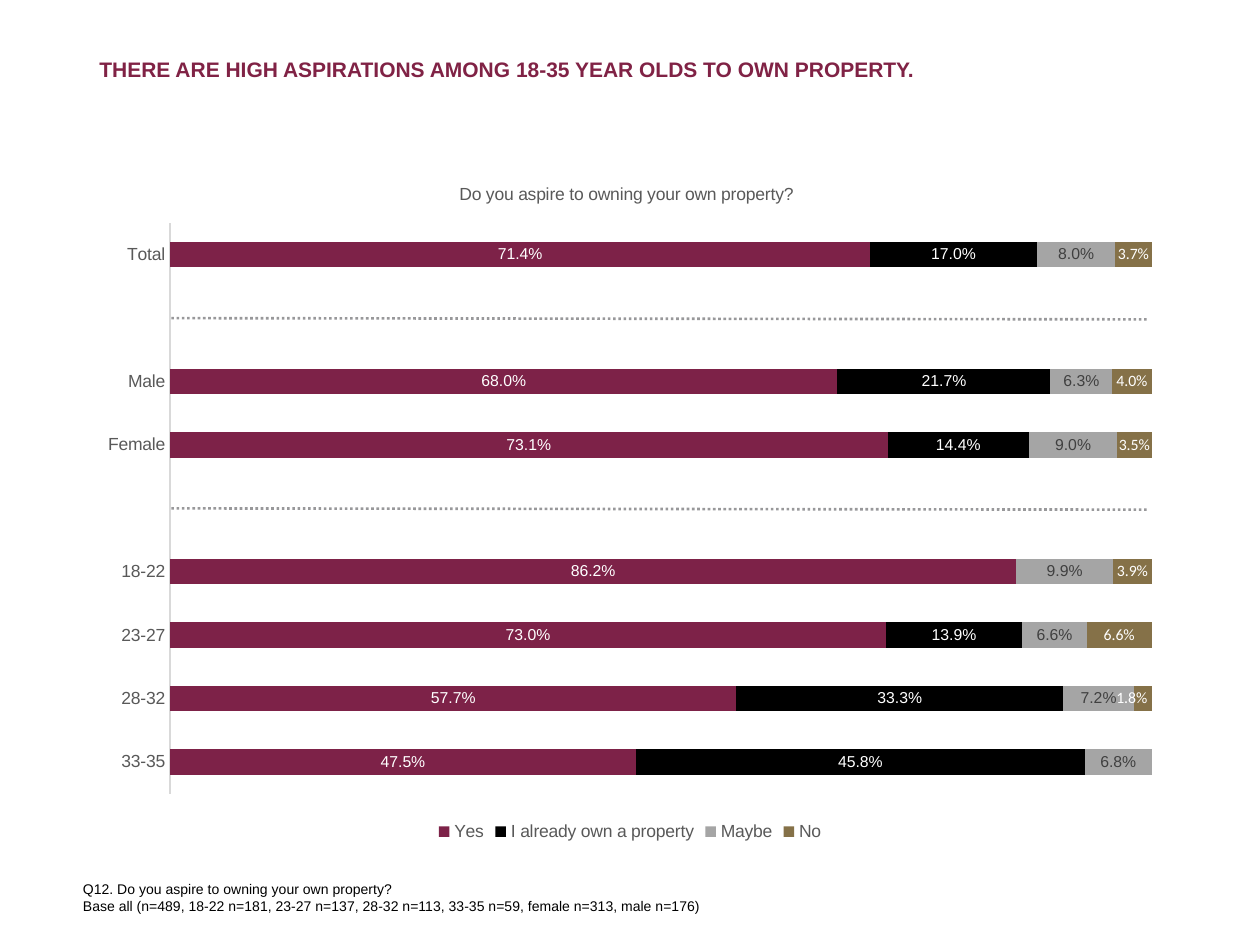
"""Build a slide on how many young adults aspire to own property."""
from typing import NamedTuple

from lxml.etree import SubElement
from pptx import Presentation
from pptx.chart.data import CategoryChartData
from pptx.dml.color import RGBColor as Rgb
from pptx.enum import chart as kinds, dml, shapes
from pptx.oxml.ns import qn
from pptx.util import Inches, Pt


class Theme(NamedTuple):
    face: str = "Arial"
    alt: str = "Calibri"
    head: str = "802245"
    wine: str = "7D2248"
    ink: str = "000000"
    grey: str = "A5A5A5"
    gold: str = "857148"
    white: str = "FFFFFF"
    dark: str = "404040"
    text: str = "595959"
    axis: str = "D9D9D9"
    rule: str = "98989A"
    big: int = 12
    mid: int = 10
    label: int = 9
    small: int = 8


class Box(NamedTuple):
    x: float
    y: float
    w: float
    h: float


class Series(NamedTuple):
    name: str
    vals: tuple
    fill: str
    ink: str
    face: str


class Note(NamedTuple):
    box: Box
    lines: tuple
    size: int
    color: str
    bold: bool
    wrap: bool


T = Theme()
FRAME = Box(0.69, 1.26, 8.62, 5.46)
PLOT = Box(1.35, 1.77, 7.79, 4.53)
CATS = ("33-35", "28-32", "23-27", "18-22", "", "Female", "Male", "", "Total")
ROW = PLOT.h / len(CATS)
BREAKS = (1.5, 4.5)
FORMAT = "0.0%;;"
ASK = "Do you aspire to owning your own property?"

BARS = (
    Series("Yes", (0.475, 0.577, 0.73, 0.862, None, 0.731, 0.68, None, 0.714),
           T.wine, T.white, T.face),
    Series("I already own a property",
           (0.458, 0.333, 0.139, 0, None, 0.144, 0.217, None, 0.17),
           T.ink, T.white, T.face),
    Series("Maybe", (0.068, 0.072, 0.066, 0.099, None, 0.09, 0.063, None, 0.08),
           T.grey, T.dark, T.face),
    Series("No", (0, 0.018, 0.066, 0.039, None, 0.035, 0.04, None, 0.037),
           T.gold, T.white, T.alt),
)

NOTES = (
    Note(Box(0.69, 0.4, 8.62, 0.64),
         ("THERE ARE HIGH ASPIRATIONS AMONG 18-35 YEAR OLDS TO OWN PROPERTY.",),
         T.big, T.head, bold=True, wrap=True),
    Note(Box(0.56, 6.94, 5.17, 0.37),
         ("Q12. " + ASK,
          "Base all (n=489, 18-22 n=181, 23-27 n=137, 28-32 n=113, 33-35 n=59, "
          "female n=313, male n=176)"),
         T.small, T.ink, bold=False, wrap=False),
)


def style(font, size: int, color: str, face: str = T.face, bold: bool = False) -> None:
    """Set the look of a font."""
    font.size, font.name, font.bold = Pt(size), face, bold
    font.color.rgb = Rgb.from_string(color)


def write(slide, note: Note) -> None:
    """Add a text box with one run a line."""
    frame = slide.shapes.add_textbox(*map(Inches, note.box)).text_frame
    frame.word_wrap = note.wrap
    for i, line in enumerate(note.lines):
        para = frame.add_paragraph() if i else frame.paragraphs[0]
        run = para.add_run()
        run.text = line
        style(run.font, note.size, note.color, bold=note.bold)


def pin(host, at: int, **vals) -> None:
    """Give a chart part a manual layout in shares of the chart."""
    for old in host.findall(qn("c:layout")):
        host.remove(old)
    lay = SubElement(host, qn("c:layout"))
    host.insert(at, lay)
    hand = SubElement(lay, qn("c:manualLayout"))
    for tag, val in vals.items():
        SubElement(hand, qn("c:" + tag)).set("val", str(val))


def paint(plot_bar, bar: Series) -> None:
    """Colour one series and its labels."""
    plot_bar.format.fill.solid()
    plot_bar.format.fill.fore_color.rgb = Rgb.from_string(bar.fill)
    tags = plot_bar.data_labels
    tags.show_value = True
    tags.position = kinds.XL_LABEL_POSITION.CENTER
    tags.number_format, tags.number_format_is_linked = FORMAT, False
    style(tags.font, T.label, bar.ink, bar.face)


def nudge(plot_bar, bar: Series, row: int, shift: float) -> None:
    """Move one label sideways by a share of the chart's width."""
    tag = plot_bar.points[row].data_label
    style(tag.font, T.label, bar.ink, bar.face)
    tag.position = kinds.XL_LABEL_POSITION.CENTER
    node = plot_bar.data_labels._element.find(qn("c:dLbl"))
    pin(node, 1, x=shift, y=0)
    form = SubElement(node, qn("c:numFmt"), formatCode=FORMAT, sourceLinked="0")
    node.insert(2, form)


def draw(slide) -> None:
    """Add the stacked bar chart."""
    data = CategoryChartData(number_format="0.0%")
    data.categories = CATS
    for bar in BARS:
        data.add_series(bar.name, bar.vals)
    kind = kinds.XL_CHART_TYPE.BAR_STACKED_100
    chart = slide.shapes.add_chart(kind, *map(Inches, FRAME), data).chart
    style(chart.font, T.mid, T.ink, T.alt)
    run = chart.chart_title.text_frame.paragraphs[0].add_run()
    run.text = ASK
    style(run.font, T.mid, T.text)
    chart.chart_title.include_in_layout = False
    edge = {"xMode": "edge", "yMode": "edge"}
    pin(chart.chart_title._element, 1, **edge, x=0.34, y=0.03)
    plot = chart.plots[0]
    plot.gap_width, plot.overlap, plot.vary_by_categories = 150, 100, False
    for plot_bar, bar in zip(plot.series, BARS):
        paint(plot_bar, bar)
    nudge(plot.series[-1], BARS[-1], CATS.index("28-32"), -0.01)
    pin(chart._chartSpace.chart.plotArea, 0, layoutTarget="inner", **edge,
        x=(PLOT.x - FRAME.x) / FRAME.w, y=(PLOT.y - FRAME.y) / FRAME.h,
        w=PLOT.w / FRAME.w, h=PLOT.h / FRAME.h)
    cat, val = chart.category_axis, chart.value_axis
    cat.major_tick_mark = cat.minor_tick_mark = kinds.XL_TICK_MARK.NONE
    style(cat.tick_labels.font, T.mid, T.text)
    cat.format.line.color.rgb = Rgb.from_string(T.axis)
    cat.format.line.width = Pt(0.75)
    val.has_major_gridlines = val.visible = False
    val.minimum_scale, val.maximum_scale = 0, 1
    chart.has_legend = True
    chart.legend.position = kinds.XL_LEGEND_POSITION.BOTTOM
    chart.legend.include_in_layout = False
    style(chart.legend.font, T.mid, T.text)


def divide(slide, row: float) -> None:
    """Add a dotted rule across the plot at a row."""
    y = PLOT.y + row * ROW
    ends = (PLOT.x + 0.01, y, PLOT.x + PLOT.w - 0.04, y + 0.01)
    rule = slide.shapes.add_connector(shapes.MSO_CONNECTOR.STRAIGHT, *map(Inches, ends))
    rule.line.color.rgb = Rgb.from_string(T.rule)
    rule.line.width, rule.line.dash_style = Pt(1.5), dml.MSO_LINE.ROUND_DOT
    SubElement(rule._element.spPr, qn("a:effectLst"))


deck = Presentation()
deck.slide_width, deck.slide_height = Inches(10), Inches(7.5)
page = deck.slides.add_slide(deck.slide_layouts[6])
for item in NOTES:
    write(page, item)
draw(page)
for step in BREAKS:
    divide(page, step)
deck.save("out.pptx")
